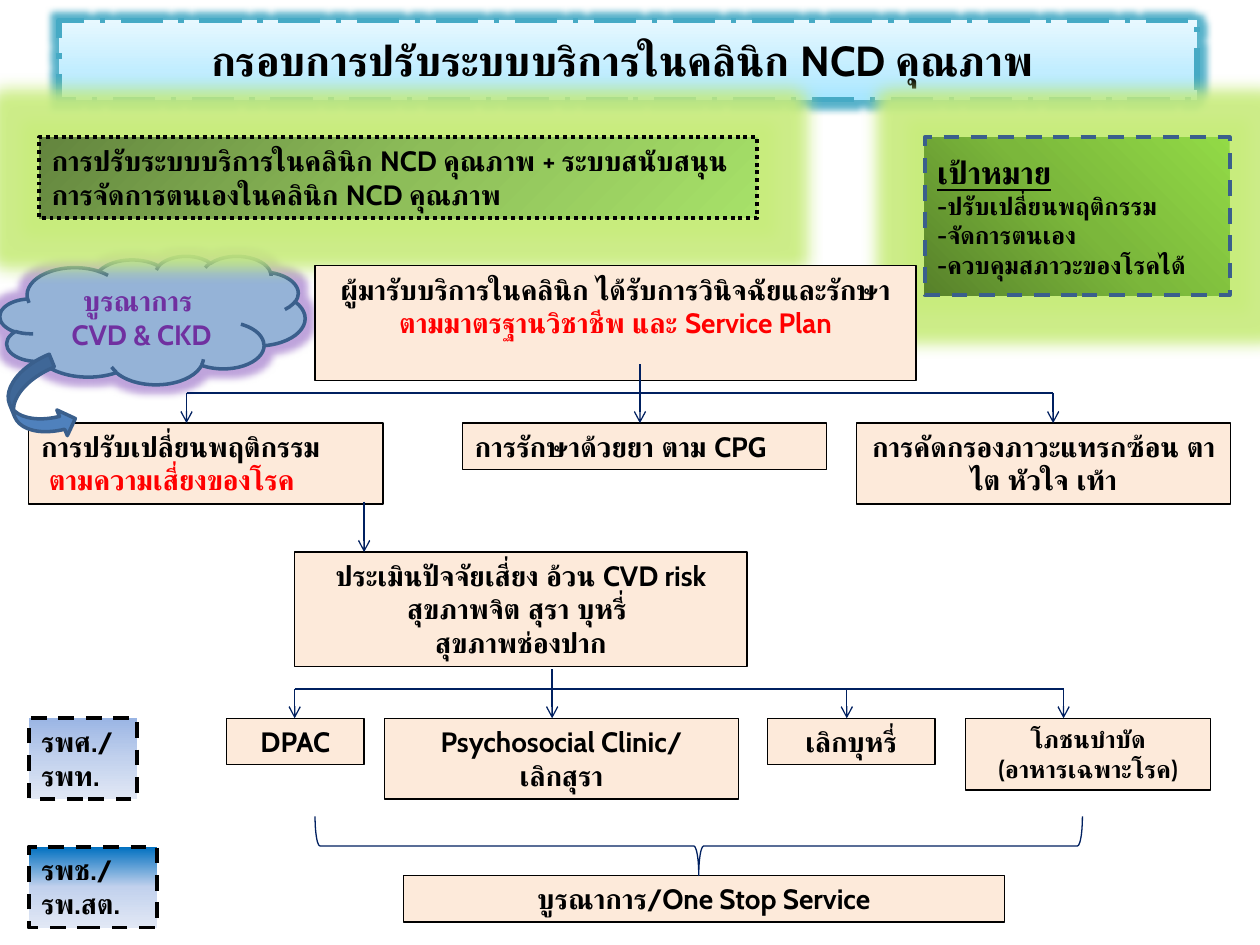
import pptx
import pptx.dml.color
import pptx.enum.dml
import pptx.enum.shapes
import pptx.enum.text
import pptx.oxml
import pptx.oxml.ns
import pptx.util

Cm, Pt = pptx.util.Cm, pptx.util.Pt
SHAPE = pptx.enum.shapes.MSO_SHAPE
DASH = pptx.enum.dml.MSO_LINE
ALIGN = pptx.enum.text.PP_ALIGN
ANCHOR = pptx.enum.text.MSO_ANCHOR
NS = pptx.oxml.ns.nsdecls("a")

COLORS = {
    "black": "000000", "red": "FF0000", "purple": "7030A0", "navy": "002060",
    "peach": "FDEADA", "teal": "46AAC5", "edge": "3A5F8C", "blue": "4F81BD",
    "cloud": "95B3D7", "green glow": "C8EC7C", "purple glow": "B89AD8",
}
# Gradient: stops as (percent, colour), then its direction
LINEAR = '<a:lin ang="{}" scaled="1"/>'
CIRCLE = '<a:path path="circle"><a:fillToRect {}/></a:path>'
GRADIENTS = {
    "title": ([(0, "A7E6FF"), (35, "C1EDFF"), (100, "E7F8FF")], LINEAR.format(270 * 60000)),
    "goal": ([(0, "57812A"), (50, "7BB73B"), (100, "92DA46")],
             CIRCLE.format('t="100000" r="100000"')),
    "system": ([(0, "63853E"), (50, "8DBD59"), (100, "A7E169")],
               CIRCLE.format('r="100000" b="100000"')),
    "large": ([(0, "9AB5E4"), (50, "C2D1ED"), (100, "E1E8F5")], LINEAR.format(90 * 60000)),
    "small": ([(0, "0070C0"), (50, "C2D1ED"), (100, "E1E8F5")], LINEAR.format(90 * 60000)),
}

TITLE = "กรอบการปรับระบบบริการในคลินิก NCD คุณภาพ "
L, C = ALIGN.LEFT, ALIGN.CENTER
STEP_Y, CLINIC_Y, LEFT_X = 8.53, 14.48, 0.58
ONE_LINE, TWO_LINES, THREE_LINES = 0.94, 1.63, 2.31

# (left, top, width, height), alignment, paragraphs of (text, format) runs
STEPS = [
    ((6.35, 5.36, 12.12, THREE_LINES), C,
     [[("ผู้มารับบริการในคลินิก ได้รับการวินิจฉัยและรักษา ", {}),
       ("ตามมาตรฐานวิชาชีพ และ Service Plan", {"color": "red"})]]),
    ((5.94, 11.13, 9.12, THREE_LINES), C,
     [[("ประเมินปัจจัยเสี่ยง อ้วน CVD risk สุขภาพจิต สุรา บุหรี่ \nสุขภาพช่องปาก", {})]]),
    ((LEFT_X, STEP_Y, 7.14, TWO_LINES), L,
     [[("การปรับเปลี่ยนพฤติกรรม\n ", {}), ("ตามความเสี่ยงของโรค", {"color": "red"})]]),
    ((9.32, STEP_Y, 7.34, ONE_LINE), L, [[("การรักษาด้วยยา ตาม CPG", {})]]),
    ((17.27, STEP_Y, 7.54, TWO_LINES), C, [[("การคัดกรองภาวะแทรกซ้อน ตา ไต หัวใจ เท้า", {})]]),
    ((8.13, 17.65, 12.12, ONE_LINE), C, [[("บูรณาการ/One Stop Service", {})]]),
    ((15.47, CLINIC_Y, 3.38, ONE_LINE), C, [[("เลิกบุหรี่", {})]]),
    ((7.75, CLINIC_Y, 7.14, TWO_LINES), C, [[("Psychosocial Clinic/\nเลิกสุรา", {})]]),
    ((4.57, CLINIC_Y, 2.77, ONE_LINE), C, [[("DPAC", {})]]),
    ((19.46, CLINIC_Y, 4.95, 1.45), C, [[("โภชนบำบัด\n(อาหารเฉพาะโรค)", {"size": 14})]]),
]
HOSPITALS = [
    ((LEFT_X, CLINIC_Y, 2.18, TWO_LINES), "large", "รพศ./\nรพท."),
    ((LEFT_X, 17.07, 2.59, TWO_LINES), "small", "รพช./\nรพ.สต."),
]
GOAL = [[("เป้าหมาย", {"size": 18, "underline": True})],
        [("-ปรับเปลี่ยนพฤติกรรม\n-จัดการตนเอง", {"size": 14})],
        [("-ควบคุมสภาวะของโรคได้", {"size": 14})]]
SYSTEM = "การปรับระบบบริการในคลินิก NCD คุณภาพ + ระบบสนับสนุนการจัดการตนเองในคลินิก NCD คุณภาพ"
CLOUD = [[("บูรณาการ ", {"color": "purple"})], [("CVD & CKD", {"color": "purple"})]]

# Bars as (left, right, y); arrows as (x, top, bottom)
STEP_BAR, CLINIC_BAR = (3.76, 21.23, 7.92), (5.94, 21.44, 13.89)
ARROWS = [(x, STEP_BAR[2], STEP_Y) for x in STEP_BAR[:2]]
ARROWS += [(x, CLINIC_BAR[2], CLINIC_Y) for x in (5.94, 17.07, 21.44)]
ARROWS += [(12.9, 7.34, STEP_Y), (7.34, 10.11, 11.13), (11.13, 13.49, CLINIC_Y)]


def rgb(name):
    return pptx.dml.color.RGBColor.from_string(COLORS[name])


def set_fill(sp, name):
    """Fill with a gradient or colour name; None leaves the shape empty."""
    if name in GRADIENTS:
        stops, direction = GRADIENTS[name]
        gs = "".join(f'<a:gs pos="{pos * 1000}"><a:srgbClr val="{color}"/></a:gs>'
                     for pos, color in stops)
        sp.fill.gradient()
        grad = sp._element.spPr.find(pptx.oxml.ns.qn("a:gradFill"))
        grad.getparent().replace(grad, pptx.oxml.parse_xml(
            f'<a:gradFill {NS} rotWithShape="1"><a:gsLst>{gs}</a:gsLst>{direction}</a:gradFill>'))
    elif name:
        sp.fill.solid()
        sp.fill.fore_color.rgb = rgb(name)
    else:
        sp.fill.background()


def set_effects(sp, glow=None):
    """Replace theme effects by a (colour, points) glow or by nothing."""
    inner = ""
    if glow:
        color, radius = glow
        inner = (f'<a:glow rad="{Pt(radius)}"><a:srgbClr val="{COLORS[color]}">'
                 '<a:alpha val="90000"/></a:srgbClr></a:glow>')
    sp._element.spPr.append(pptx.oxml.parse_xml(f"<a:effectLst {NS}>{inner}</a:effectLst>"))


def set_line(sp, color, width, dash=None):
    sp.line.color.rgb = rgb(color)
    sp.line.width = Pt(width)
    if dash:
        sp.line.dash_style = dash


def write(sp, paragraphs, align, anchor):
    tf = sp.text_frame
    tf.word_wrap = True
    tf.vertical_anchor = anchor
    for i, runs in enumerate(paragraphs):
        p = tf.paragraphs[0] if i == 0 else tf.add_paragraph()
        p.alignment = align
        for text, extra in runs:
            fmt = {"name": "Cabin", "size": 16, "bold": True, "color": "black", **extra}
            color, size = fmt.pop("color"), fmt.pop("size")
            for j, line in enumerate(text.split("\n")):
                if j:
                    p.add_line_break()
                r = p.add_run()
                r.text = line
                r.font.size = Pt(size)
                r.font.color.rgb = rgb(color)
                for key, value in fmt.items():
                    setattr(r.font, key, value)


def place(sp, box):
    for key, value in zip(("left", "top", "width", "height"), box):
        setattr(sp, key, Cm(value))


def add_box(shapes, box, fill, line, paragraphs=(), align=L, anchor=ANCHOR.TOP,
            kind=SHAPE.RECTANGLE, glow=None, rotation=0):
    sp = shapes.add_shape(kind, *map(Cm, box))
    sp.rotation = rotation
    set_fill(sp, fill)
    set_line(sp, *line)
    set_effects(sp, glow)
    write(sp, paragraphs, align, anchor)


def add_line(shapes, x1, y1, x2, y2, arrow=False):
    line = shapes.add_connector(pptx.enum.shapes.MSO_CONNECTOR.STRAIGHT,
                                *map(Cm, (x1, y1, x2, y2)))
    set_line(line, "navy", 0.75)
    set_effects(line)
    if arrow:
        line.line._get_or_add_ln().append(pptx.oxml.parse_xml(f'<a:tailEnd {NS} type="arrow"/>'))


def main():
    prs = pptx.Presentation()
    prs.slide_width, prs.slide_height = Cm(25.4), Cm(19.05)
    s = prs.slides.add_slide(prs.slide_layouts[5])
    shapes = s.shapes

    title = shapes.title
    place(title, (1.19, 0.41, 22.94, 1.6))
    set_fill(title, "title")
    set_line(title, "teal", 3, DASH.LONG_DASH_DOT)
    set_effects(title, ("teal", 8))
    write(title, [[(TITLE, {"size": 24})]], C, ANCHOR.MIDDLE)

    add_box(shapes, (18.64, 2.77, 6.15, 3.18), "goal", ("edge", 2.25, DASH.DASH), GOAL,
            anchor=ANCHOR.MIDDLE, glow=("green glow", 18))
    add_box(shapes, (0, 5.16, 6.15, 2.59), "cloud", ("edge", 2), CLOUD, C, ANCHOR.MIDDLE,
            SHAPE.CLOUD, ("purple glow", 8))
    add_box(shapes, (0.79, 2.77, 14.48, TWO_LINES), "system",
            ("black", 2.25, DASH.ROUND_DOT), [[(SYSTEM, {})]], glow=("green glow", 18))
    for box, align, paragraphs in STEPS:
        add_box(shapes, box, "peach", ("black", 0.75), paragraphs, align)
    for box, fill, text in HOSPITALS:
        add_box(shapes, box, fill, ("black", 2.25, DASH.DASH), [[(text, {})]])

    for left, right, y in (STEP_BAR, CLINIC_BAR):
        add_line(shapes, left, y, right, y)
    for x, top, bottom in ARROWS:
        add_line(shapes, x, top, x, bottom, arrow=True)

    add_box(shapes, (13.49, 9.32, 1.19, 15.47), None, ("navy", 0.75),
            kind=SHAPE.RIGHT_BRACE, rotation=90)
    add_box(shapes, (0.23, 7.29, 1.12, 1.68), "blue", ("edge", 2),
            kind=SHAPE.CURVED_RIGHT_ARROW, rotation=337.9)
    prs.save("out.pptx")


if __name__ == "__main__":
    main()
